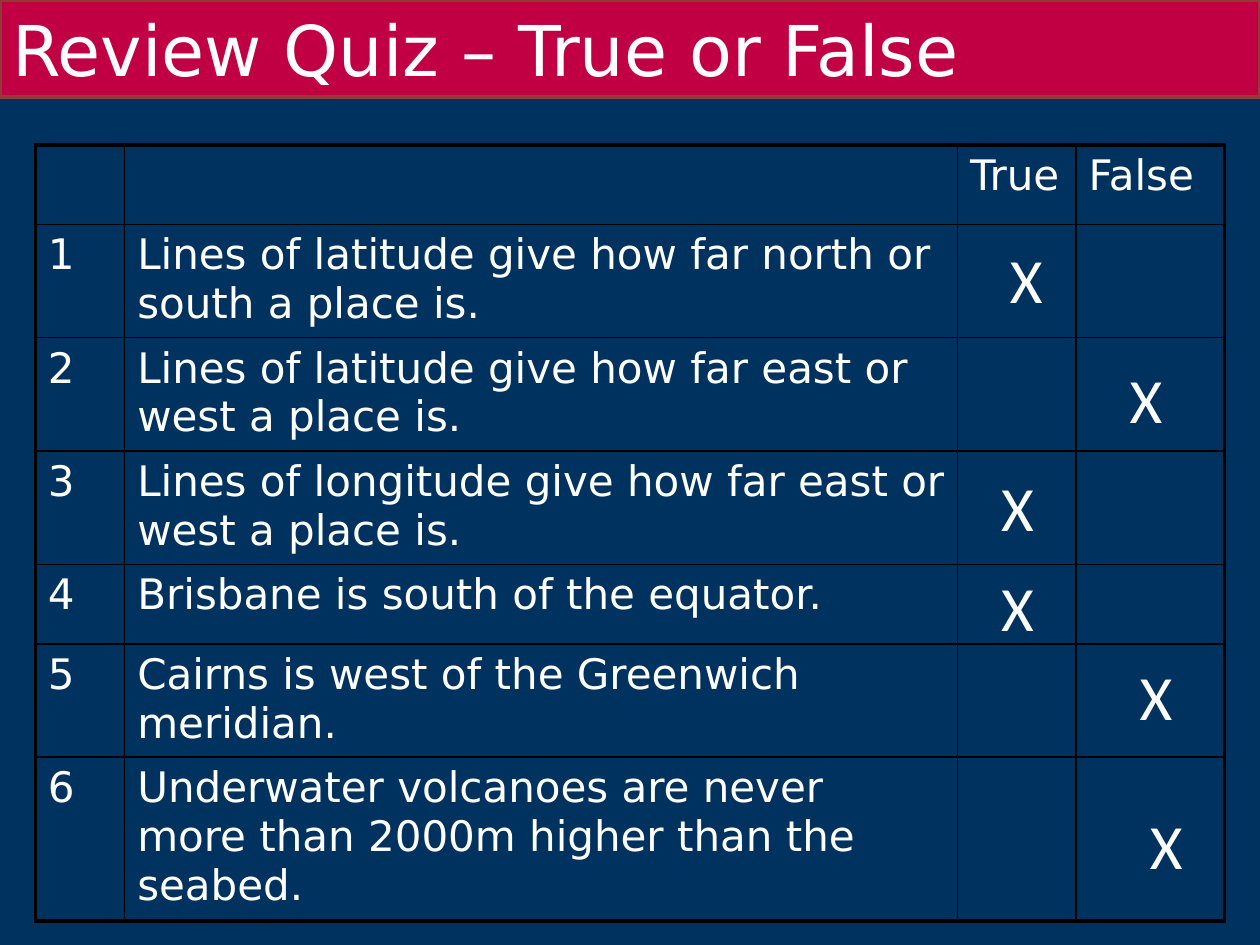
from pptx import Presentation
from pptx.dml.color import RGBColor
from pptx.enum.shapes import MSO_SHAPE
from pptx.enum.text import MSO_ANCHOR, MSO_AUTO_SIZE, PP_ALIGN
from pptx.oxml.ns import qn
from pptx.util import Inches, Pt
from lxml.etree import SubElement

NAVY = RGBColor(0x00, 0x32, 0x5F)
RED = RGBColor(0xC1, 0x00, 0x43)
BROWN = RGBColor(0x8E, 0x3B, 0x39)
WHITE = RGBColor(0xFF, 0xFF, 0xFF)
BLACK = RGBColor(0x00, 0x00, 0x00)

TITLE = {"name": "DejaVu Sans", "size": Pt(40)}
BODY = {"name": "DejaVu Sans", "size": Pt(24)}
MARK = {"name": "Calibri", "size": Pt(36)}


def write(frame, text, style, align=PP_ALIGN.LEFT):
    frame.word_wrap = True
    para = frame.paragraphs[0]
    para.alignment = align
    run = para.add_run()
    run.text = text
    for key, value in style.items():
        setattr(run.font, key, value)
    run.font.color.rgb = WHITE


def edge(cell, side, width):
    line = SubElement(cell._tc.get_or_add_tcPr(), qn(f"a:ln{side}"), w=str(Pt(width)))
    fill = SubElement(line, qn("a:solidFill"))
    SubElement(fill, qn("a:srgbClr"), val=str(BLACK))


deck = Presentation()
deck.slide_width = Inches(10)
deck.slide_height = Inches(7.5)
slide = deck.slides.add_slide(deck.slide_layouts[6])
slide.background.fill.solid()
slide.background.fill.fore_color.rgb = NAVY

title = slide.shapes.add_shape(MSO_SHAPE.RECTANGLE, 0, 0, Inches(10), Inches(0.77))
title.shadow.inherit = False
title.fill.solid()
title.fill.fore_color.rgb = RED
title.line.color.rgb = BROWN
title.line.width = Pt(2)
title.text_frame.vertical_anchor = MSO_ANCHOR.TOP
write(title.text_frame, "Review Quiz – True or False", TITLE)

claims = [
    "Lines of latitude give how far north or south a place is.",
    "Lines of latitude give how far east or west a place is.",
    "Lines of longitude give how far east or west a place is.",
    "Brisbane is south of the equator.",
    "Cairns is west of the Greenwich meridian.",
    "Underwater volcanoes are never more than 2000m higher than the seabed.",
]
rows = [("", "", "True", "False")]
rows += [(str(num), claim, "", "") for num, claim in enumerate(claims, 1)]
widths = [0.71, 6.61, 0.94, 1.18]
heights = [0.63, 0.9, 0.9, 0.9, 0.63, 0.9, 1.3]

grid = slide.shapes.add_table(
    len(rows), len(widths), Inches(0.28), Inches(1.15),
    Inches(sum(widths)), Inches(sum(heights))).table
grid.first_row = False
grid.horz_banding = False
for col, width in zip(grid.columns, widths):
    col.width = Inches(width)
for row, height in zip(grid.rows, heights):
    row.height = Inches(height)

for r, texts in enumerate(rows):
    for c, text in enumerate(texts):
        cell = grid.cell(r, c)
        outer = {"L": c == 0, "R": c == len(widths) - 1,
                 "T": r == 0, "B": r == len(rows) - 1}
        for side, thick in outer.items():
            edge(cell, side, 2.25 if thick else 1)
        cell.fill.background()
        if text:
            write(cell.text_frame, text, BODY)

marks = [(7.83, 1.86), (8.78, 2.81), (7.76, 3.67),
         (7.76, 4.46), (8.86, 5.17), (8.94, 6.35)]
for left, top in marks:
    box = slide.shapes.add_textbox(Inches(left), Inches(top), Inches(0.63), Inches(0.71))
    box.text_frame.auto_size = MSO_AUTO_SIZE.SHAPE_TO_FIT_TEXT
    write(box.text_frame, "X", MARK, PP_ALIGN.CENTER)

deck.save("out.pptx")
